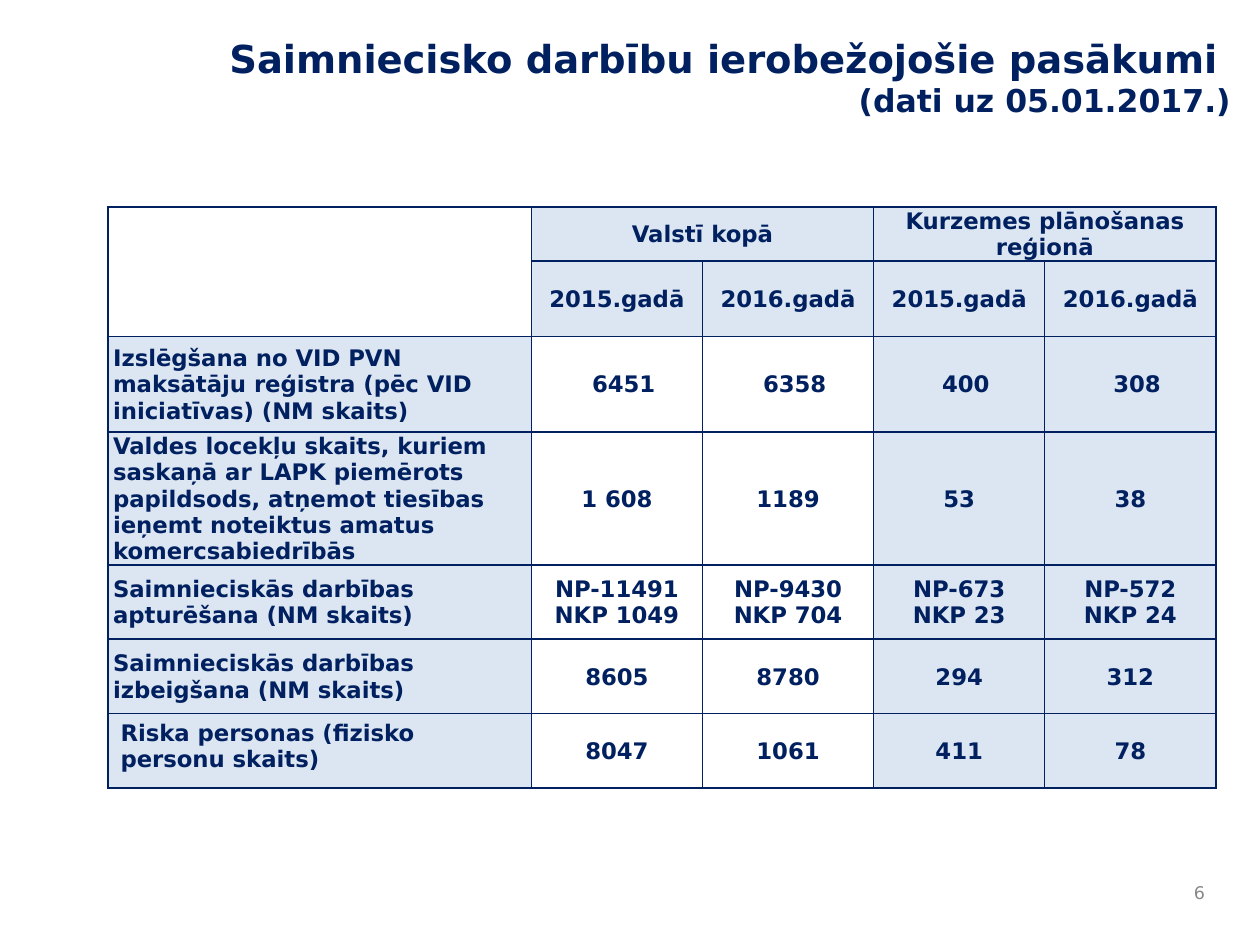
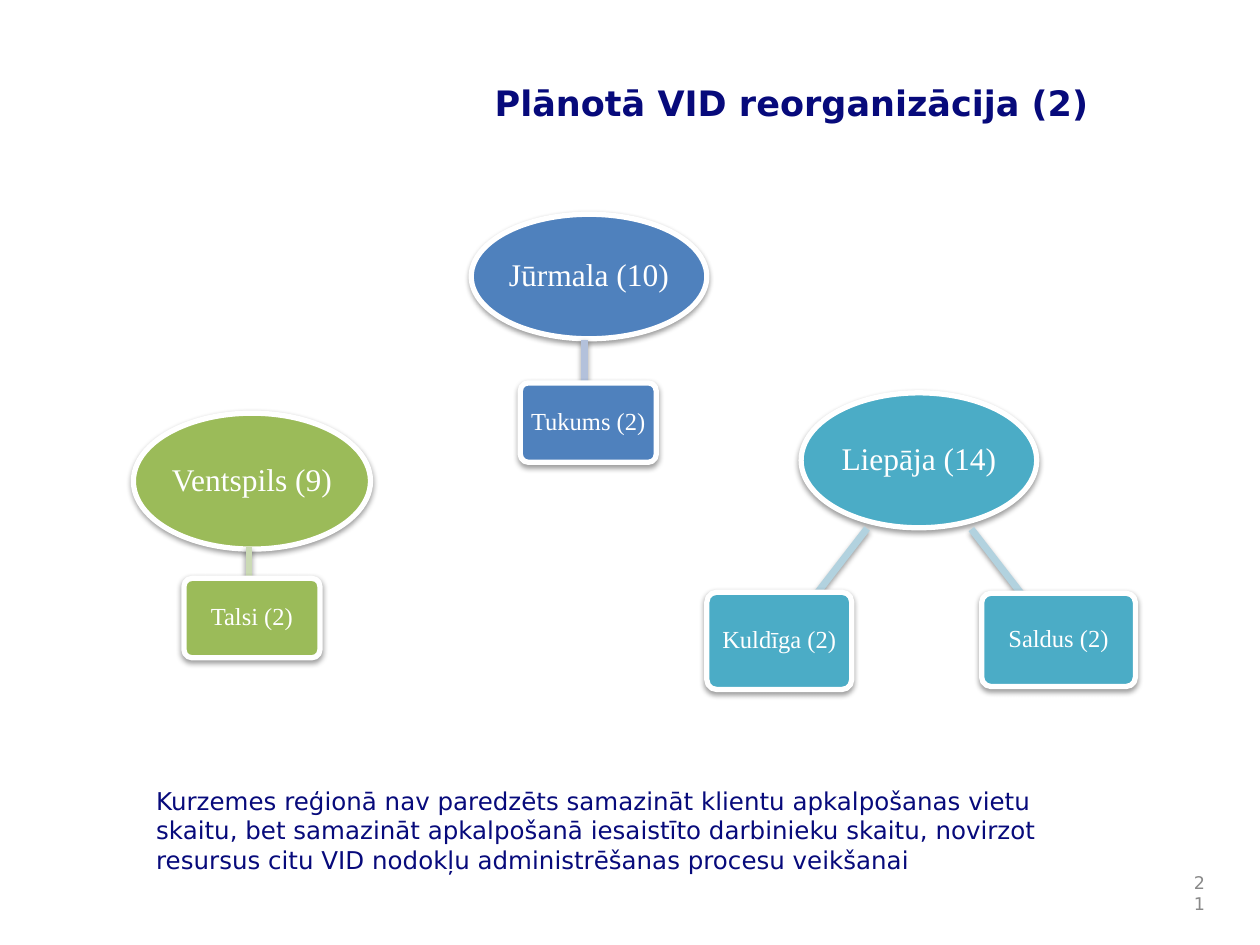
from lxml.etree import SubElement
from pptx import Presentation
from pptx.dml.color import RGBColor
from pptx.enum.shapes import MSO_SHAPE as Shape
from pptx.enum.text import MSO_ANCHOR as Anchor, MSO_AUTO_SIZE as Fit, PP_ALIGN as Align
from pptx.oxml.ns import qn
from pptx.util import Cm, Pt

# Shared look
NAVY = RGBColor(0x00, 0x20, 0x60)
INDIGO = RGBColor(0x07, 0x0A, 0x7B)
GREY = RGBColor(0x89, 0x89, 0x89)
WHITE = RGBColor(0xFF, 0xFF, 0xFF)
PALE = RGBColor(0xDC, 0xE6, 0xF2)
BLUE, SKY = RGBColor(0x4F, 0x81, 0xBD), RGBColor(0xB3, 0xC1, 0xDB)
TEAL, ICE = RGBColor(0x4B, 0xAC, 0xC6), RGBColor(0xB2, 0xD2, 0xDF)
GREEN, MINT = RGBColor(0x9B, 0xBB, 0x59), RGBColor(0xCB, 0xDA, 0xB5)
SANS, SERIF = "DejaVu Sans", "Times New Roman"
EDGE = 24.54  # right edge of the page numbers
BAR = 0.14  # thickness of the links

# Table content
HEADS = ["Valstī kopā", "Kurzemes plānošanas reģionā"]
YEARS = ["2015.gadā", "2016.gadā"] * 2
ROWS = [
    ["Izslēgšana no VID PVN maksātāju reģistra (pēc VID iniciatīvas) (NM skaits)",
     "6451", "6358", "400", "308"],
    ["Valdes locekļu skaits, kuriem saskaņā ar LAPK piemērots papildsods, "
     "atņemot tiesības ieņemt noteiktus amatus komercsabiedrībās",
     "1 608", "1189", "53", "38"],
    ["Saimnieciskās darbības apturēšana (NM skaits)",
     "NP-11491\nNKP 1049", "NP-9430\nNKP 704", "NP-673\nNKP 23", "NP-572\nNKP 24"],
    ["Saimnieciskās darbības izbeigšana (NM skaits)", "8605", "8780", "294", "312"],
    ["Riska personas (fizisko personu skaits)", "8047", "1061", "411", "78"],
]
WIDTHS = [8.53] + [3.45] * 4
HEIGHTS = [0.97, 1.52, 1.93, 2.49] + [1.5] * 3

# Office trees: hub (text, box), then branches (text, box, link centre, length, angle)
TREES = [
    (BLUE, SKY, ("Jūrmala (10)", (9.5, 4.32, 4.75, 2.51)),
     [("Tukums (2)", (10.49, 7.72, 2.74, 1.6), (11.79, 7.53), 1.37, 270)]),
    (TEAL, ICE, ("Liepāja (14)", (16.15, 7.92, 4.75, 2.72)),
     [("Kuldīga (2)", (14.25, 11.94, 2.92, 1.96), (16.6, 11.79), 2.87, 127.7),
      ("Saldus (2)", (19.79, 11.96, 3.1, 1.88), (20.45, 11.79), 2.84, 52.3)]),
    (GREEN, MINT, ("Ventspils (9)", (2.69, 8.33, 4.78, 2.74)),
     [("Talsi (2)", (3.71, 11.66, 2.74, 1.6), (5.02, 11.6), 1.14, 270)]),
]
NOTE = ("Kurzemes reģionā nav paredzēts samazināt klientu apkalpošanas vietu skaitu, "
        "bet samazināt apkalpošanā iesaistīto darbinieku skaitu, novirzot resursus "
        "citu VID nodokļu administrēšanas procesu veikšanai")


def style(para, size, color, align=Align.LEFT, face=SANS, bold=False):
    para.alignment = align
    font = para.font
    font.name, font.size, font.bold = face, Pt(size), bold
    font.color.rgb = color


def inset(item, left, top, right, bottom):
    item.margin_left, item.margin_top = Cm(left), Cm(top)
    item.margin_right, item.margin_bottom = Cm(right), Cm(bottom)


def add_title(slide, box, text, size, color, align, sub=None):
    title = slide.shapes.title
    title.left, title.top, title.width, title.height = map(Cm, box)
    frame = title.text_frame
    frame.auto_size, frame.vertical_anchor = Fit.NONE, Anchor.TOP
    para = frame.paragraphs[0]
    style(para, size, color, align, bold=True)
    para.add_run().text = text
    if sub:
        para.add_line_break()
        run = para.add_run()
        run.text, run.font.size = sub, Pt(18)


def add_text(slide, box, text, size, color, align=Align.LEFT, anchor=Anchor.TOP):
    frame = slide.shapes.add_textbox(*map(Cm, box)).text_frame
    frame.word_wrap, frame.vertical_anchor = True, anchor
    frame.text = text
    style(frame.paragraphs[0], size, color, align)


def add_page(slide, number, width):
    add_text(slide, (EDGE - width, 17.58, width, 0.84), number, 10, GREY,
             Align.RIGHT, Anchor.MIDDLE)


# Table
def set_cell(cell, text, fill=None, align=Align.CENTER, left=0.03):
    cell.text = text
    cell.vertical_anchor = Anchor.MIDDLE
    inset(cell, left, 0.03, 0.03, 0)
    for para in cell.text_frame.paragraphs:
        style(para, 13, NAVY, align, bold=True)
    props = cell._tc.get_or_add_tcPr()
    for side in ("a:lnL", "a:lnR", "a:lnT", "a:lnB"):
        line = SubElement(props, qn(side), w=str(Pt(1)))
        paint = SubElement(line, qn("a:solidFill"))
        SubElement(paint, qn("a:srgbClr"), val=str(NAVY))
    if fill:
        cell.fill.solid()
        cell.fill.fore_color.rgb = fill
    else:
        cell.fill.background()


def add_grid(slide):
    grid = slide.shapes.add_table(len(HEIGHTS), len(WIDTHS), Cm(2.18), Cm(4.17),
                                  Cm(sum(WIDTHS)), Cm(sum(HEIGHTS))).table
    grid.first_row = grid.horz_banding = False
    for col, width in zip(grid.columns, WIDTHS):
        col.width = Cm(width)
    for row, height in zip(grid.rows, HEIGHTS):
        row.height = Cm(height)

    # Two header rows
    heads = ["", HEADS[0], "", HEADS[1], ""]
    for r, texts in enumerate([heads, [""] + YEARS]):
        for c, text in enumerate(texts):
            set_cell(grid.cell(r, c), text, PALE if c else None)
    grid.cell(0, 0).merge(grid.cell(1, 0))
    for c in (1, 3):
        grid.cell(0, c).merge(grid.cell(0, c + 1))

    # Data rows: the national columns stay unfilled
    for r, (label, *values) in enumerate(ROWS, 2):
        set_cell(grid.cell(r, 0), label, PALE, Align.LEFT, 0.1)
        for c, value in enumerate(values, 1):
            set_cell(grid.cell(r, c), value, PALE if c > 2 else None,
                     left=0.3 if r == 2 else 0.03)
    last = grid.cell(len(HEIGHTS) - 1, 0)
    last.vertical_anchor = Anchor.TOP
    inset(last, 0.25, 0.13, 0.25, 0.13)


# Office trees
def add_solid(group, kind, box, color):
    shape = group.shapes.add_shape(kind, *map(Cm, box))
    shape.fill.solid()
    shape.fill.fore_color.rgb = color
    shape.line.fill.background()
    shape.shadow.inherit = False
    glow = SubElement(shape._element.spPr.find(qn("a:effectLst")), qn("a:outerShdw"),
                      blurRad="40000", dist="20000", dir="5400000", rotWithShape="0")
    tint = SubElement(glow, qn("a:srgbClr"), val="000000")
    SubElement(tint, qn("a:alpha"), val="38000")
    return shape


def add_node(group, kind, box, color, text, size, pad):
    node = add_solid(group, kind, box, color)
    node.line.color.rgb, node.line.width = WHITE, Pt(3)
    frame = node.text_frame
    frame.word_wrap, frame.vertical_anchor = True, Anchor.MIDDLE
    inset(frame, pad, pad, pad, pad)
    frame.text = text
    para = frame.paragraphs[0]
    para.line_spacing = 0.9
    style(para, size, WHITE, Align.CENTER, SERIF)
    return node


def add_link(group, mid, length, angle, color):
    x, y = mid
    box = (x - length / 2, y - BAR / 2, length, BAR)
    add_solid(group, Shape.FLOWCHART_PROCESS, box, color).rotation = angle


def add_tree(slide, color, pale, hub, parts):
    group = slide.shapes.add_group_shape()
    name, box = hub
    add_node(group, Shape.OVAL, box, color, name, 18, 0.03)
    for text, place, mid, length, angle in parts:
        add_link(group, mid, length, angle, pale)
        node = add_node(group, Shape.ROUNDED_RECTANGLE, place, color, text, 14, 0.08)
        node.adjustments[0] = 0.1


def main():
    deck = Presentation()
    deck.slide_width, deck.slide_height = Cm(25.4), Cm(19.05)
    plain = deck.slide_layouts[5]

    # Measures table
    slide = deck.slides.add_slide(plain)
    add_title(slide, (4.17, 0.58, 20.9, 2.67), "Saimniecisko darbību ierobežojošie pasākumi ",
              22, NAVY, Align.RIGHT, "(dati uz 05.01.2017.)")
    add_grid(slide)
    add_page(slide, "6", 1.09)

    # Planned offices
    slide = deck.slides.add_slide(plain)
    add_title(slide, (7.49, 1.52, 16.94, 1.68), "Plānotā VID reorganizācija (2)",
              20, INDIGO, Align.CENTER)
    add_page(slide, "21", 0.84)
    for tree in TREES:
        add_tree(slide, *tree)
    add_text(slide, (2.9, 15.72, 19.61, 2.06), NOTE, 14, INDIGO)

    deck.save("out.pptx")


if __name__ == "__main__":
    main()
